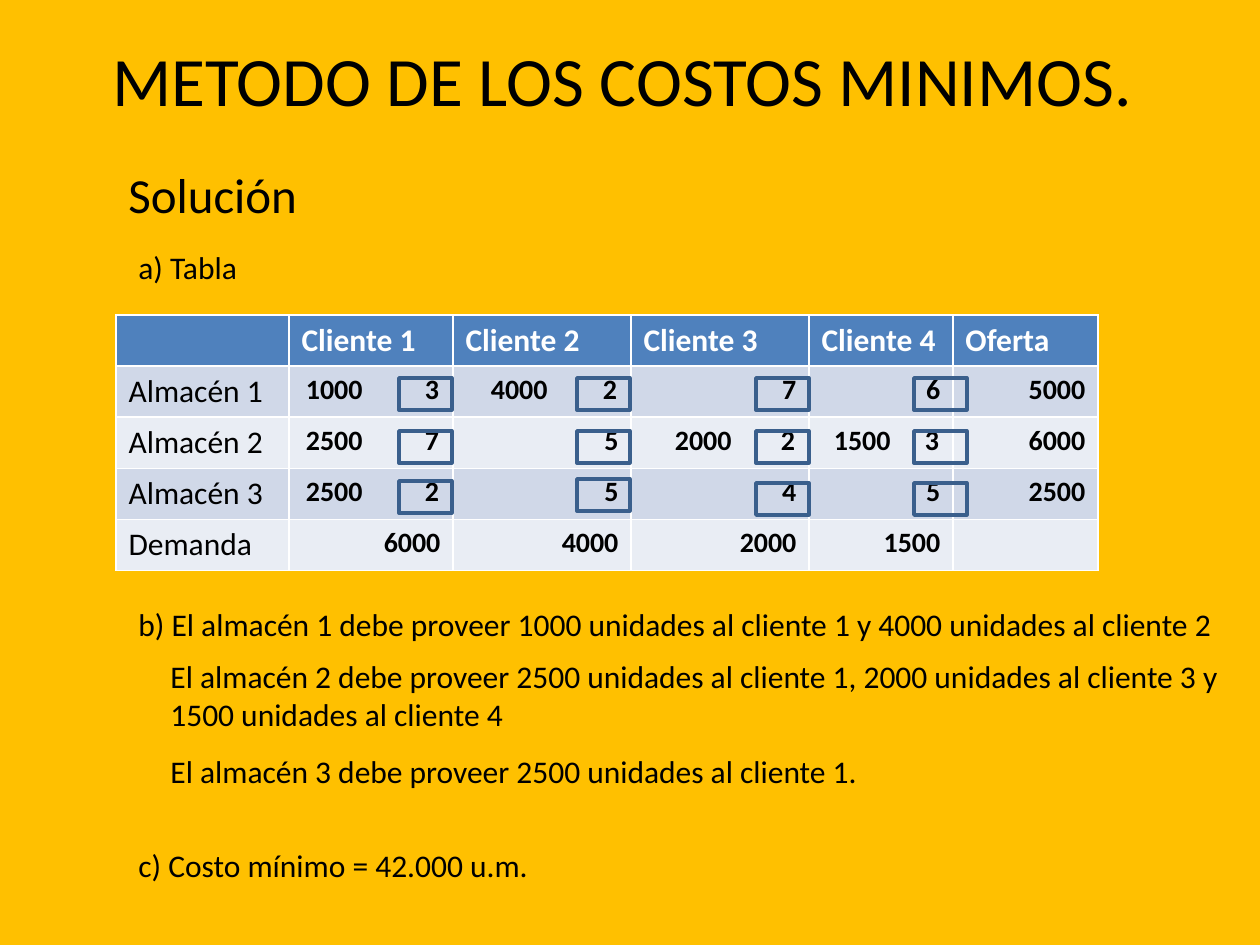
from lxml.etree import SubElement
from pptx import Presentation
from pptx.dml.color import RGBColor
from pptx.enum.shapes import MSO_SHAPE
from pptx.enum.text import MSO_ANCHOR, PP_ALIGN as ALIGN
from pptx.oxml.ns import qn
from pptx.util import Pt

PX_PER_INCH = 126
INSET = 13
BLACK, WHITE = "000000", "FFFFFF"
HEADER, BAND_DARK, BAND_LIGHT = "4F81BD", "D0D8E8", "E9EDF4"

COLUMNS = (173, 164, 178, 178, 144, 145)
ROW_HEIGHT = 51
# Extra left inset of the assigned units in each client column
UNIT_INDENTS = (0, 4, 25, 31, 12, 0)
# A tab separates the assigned units from the unit cost
ROWS = (
    ("", "Cliente 1", "Cliente 2", "Cliente 3", "Cliente 4", "Oferta"),
    ("Almacén 1", "1000\t3", "4000\t2", "7", "6", "5000"),
    ("Almacén 2", "2500\t7", "5", "2000\t2", "1500\t3", "6000"),
    ("Almacén 3", "2500\t2", "5", "4", "5", "2500"),
    ("Demanda", "6000", "4000", "2000", "1500", ""),
)
COST_LEFTS = (283, 461, 640, 798)
COST_TOPS = ((63,) * 4, (116,) * 4, (166, 164, 168, 168))

TEXTS = (
    ("Solución", (116, 158, 441, 72), 28),
    ("a) Tabla", (126, 242, 441, 50), 18),
    ("b) El almacén 1 debe proveer 1000 unidades al cliente 1 y 4000 unidades "
     "al cliente 2", (126, 599, 1103, 50), 18),
    ("El almacén 2 debe proveer 2500 unidades al cliente 1, 2000 unidades al "
     "cliente 3 y 1500 unidades al cliente 4", (158, 651, 1103, 89), 18),
    ("El almacén 3 debe proveer 2500 unidades al cliente 1.",
     (158, 746, 1103, 50), 18),
    ("c) Costo mínimo = 42.000 u.m.", (126, 840, 662, 50), 18),
)


def px(length):
    return round(length * 914400 / PX_PER_INCH)


def rgb(color):
    return RGBColor.from_string(color)


def style(paragraph, size, color=BLACK, bold=False):
    for run in paragraph.runs:
        font = run.font
        font.name, font.size, font.bold = "Calibri", Pt(size), bold
        font.color.rgb = rgb(color)


def add_right_tab(paragraph, position):
    tabs = SubElement(paragraph._p.get_or_add_pPr(), qn("a:tabLst"))
    SubElement(tabs, qn("a:tab"), pos=str(px(position)), algn="r")


def add_title(slide, box):
    title = slide.shapes.title
    title.left, title.top, title.width, title.height = map(px, box)
    frame = title.text_frame
    frame.text = "METODO DE LOS COSTOS MINIMOS. "
    frame.vertical_anchor = MSO_ANCHOR.MIDDLE
    frame.paragraphs[0].alignment = ALIGN.CENTER
    style(frame.paragraphs[0], 39.6)


def add_text(slide, text, box, size):
    frame = slide.shapes.add_textbox(*map(px, box)).text_frame
    frame.word_wrap = True
    frame.text = text
    style(frame.paragraphs[0], size)


def fill_cell(cell, text, row, column):
    cell.fill.solid()
    band = BAND_DARK if row % 2 else BAND_LIGHT
    cell.fill.fore_color.rgb = rgb(band if row else HEADER)
    if not text:
        return
    cell.text = text
    paragraph = cell.text_frame.paragraphs[0]
    if row == 0:
        style(paragraph, 18, WHITE, bold=True)
    elif column == 0:
        style(paragraph, 18)
    else:
        style(paragraph, 16, bold=True)
        if "\t" in text:
            left = INSET + UNIT_INDENTS[column]
            cell.margin_left = px(left)
            add_right_tab(paragraph, COLUMNS[column] - left - INSET - 1)
        else:
            paragraph.alignment = ALIGN.RIGHT


def add_cost_table(slide, left, top):
    size = sum(COLUMNS), ROW_HEIGHT * len(ROWS)
    table = slide.shapes.add_table(len(ROWS), len(COLUMNS),
                                   *map(px, (left, top, *size))).table
    for column, width in zip(table.columns, COLUMNS):
        column.width = px(width)
    for r, texts in enumerate(ROWS):
        table.rows[r].height = px(ROW_HEIGHT)
        for c, text in enumerate(texts):
            fill_cell(table.cell(r, c), text, r, c)


def add_cost_frames(slide, left, top):
    """Outline the unit cost in each warehouse and client cell."""
    for row_tops in COST_TOPS:
        for x, y in zip(COST_LEFTS, row_tops):
            frame = slide.shapes.add_shape(
                MSO_SHAPE.RECTANGLE, *map(px, (left + x, top + y, 53, 32)))
            frame.shadow.inherit = False
            frame.fill.background()
            frame.line.color.rgb = rgb("3A5F8C")
            frame.line.width = Pt(2)


def main():
    deck = Presentation()
    deck.slide_width, deck.slide_height = px(1260), px(945)
    slide = deck.slides.add_slide(deck.slide_layouts[5])
    slide.background.fill.solid()
    slide.background.fill.fore_color.rgb = rgb("FFC000")
    add_title(slide, (63, 0, 1134, 158))
    add_cost_table(slide, 116, 315)
    add_cost_frames(slide, 116, 315)
    for text, box, size in TEXTS:
        add_text(slide, text, box, size)
    deck.save("out.pptx")


if __name__ == "__main__":
    main()
